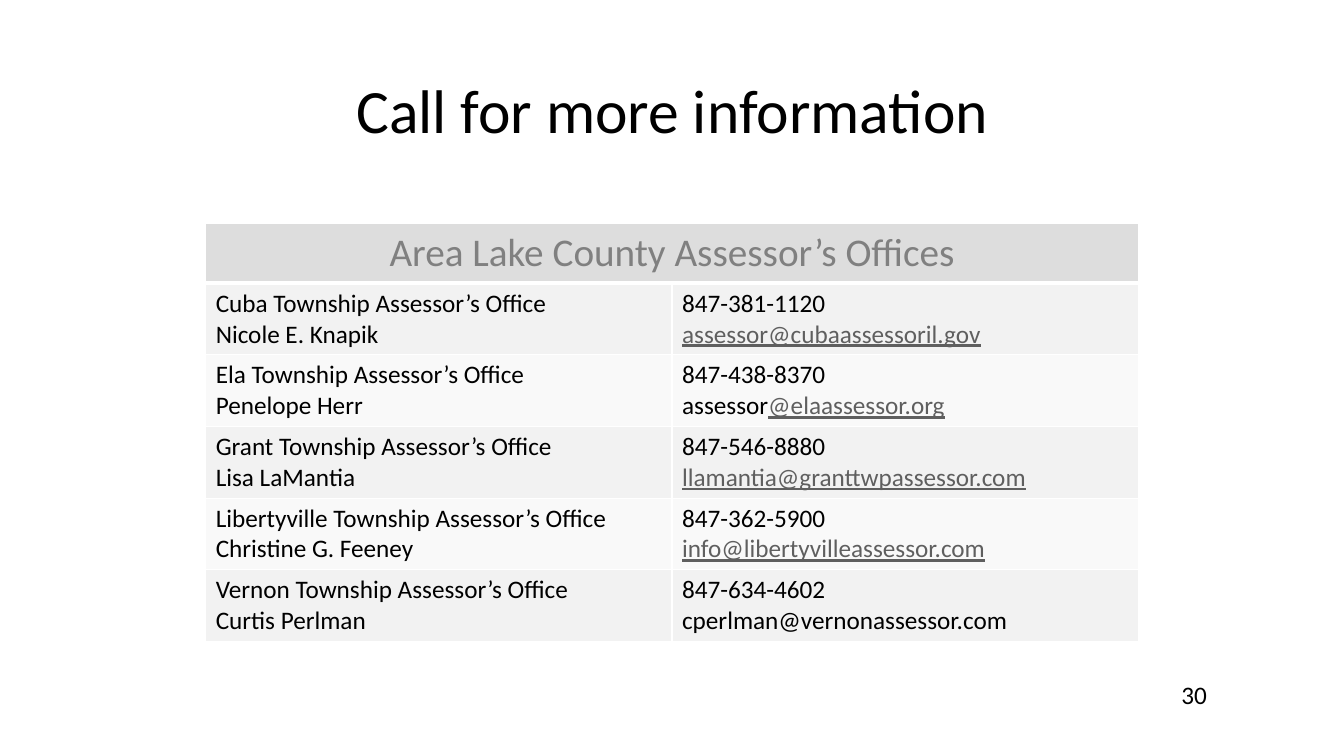
"""Build a slide with a contact table of township assessor's offices."""
from dataclasses import dataclass

from lxml.etree import SubElement
from pptx import Presentation
from pptx.dml.color import RGBColor
from pptx.enum.text import MSO_ANCHOR, PP_ALIGN
from pptx.oxml.ns import qn
from pptx.util import Inches, Pt


@dataclass(frozen=True)
class Theme:
    font: str = "Calibri"
    ink: str = "000000"
    head: str = "808080"
    link: str = "5F5F5F"
    edge: str = "FFFFFF"
    top: str = "DDDDDD"
    bands: tuple = ("F2F2F2", "F9F9F9")
    large: int = 44
    medium: int = 28
    small: int = 18


theme = Theme()


def style(run, size, color):
    run.font.name = theme.font
    run.font.size = Pt(size)
    run.font.color.rgb = RGBColor.from_string(color)


def finish(cell, fill, above, below):
    props = cell._tc.get_or_add_tcPr()
    for side, width in (("L", 1), ("R", 1), ("T", above), ("B", below)):
        line = SubElement(props, qn(f"a:ln{side}"), w=str(Pt(width)))
        solid = SubElement(line, qn("a:solidFill"))
        SubElement(solid, qn("a:srgbClr"), val=theme.edge)
    cell.fill.solid()
    cell.fill.fore_color.rgb = RGBColor.from_string(fill)


deck = Presentation()
deck.slide_width = Inches(13.33)
deck.slide_height = Inches(7.5)
slide = deck.slides.add_slide(deck.slide_layouts[5])

title = slide.shapes.title
title.left, title.top = Inches(0.92), Inches(0.4)
title.width, title.height = Inches(11.5), Inches(1.45)
frame = title.text_frame
frame.text = "Call for more information"
frame.vertical_anchor = MSO_ANCHOR.MIDDLE
para = frame.paragraphs[0]
para.alignment = PP_ALIGN.CENTER
para.line_spacing = 0.9
style(para.runs[0], theme.large, theme.ink)

offices = [
    ("Cuba", "Nicole E. Knapik", "847-381-1120", "", "assessor@cubaassessoril.gov"),
    ("Ela", "Penelope Herr", "847-438-8370", "assessor", "@elaassessor.org"),
    ("Grant", "Lisa LaMantia", "847-546-8880", "", "llamantia@granttwpassessor.com"),
    ("Libertyville", "Christine G. Feeney", "847-362-5900", "", "info@libertyvilleassessor.com"),
    ("Vernon", "Curtis Perlman", "847-634-4602", "cperlman@vernonassessor.com", ""),
]

table = slide.shapes.add_table(
    len(offices) + 1, 2, Inches(2.04), Inches(2.22), Inches(9.25), Inches(4.09)
).table
for row in table.rows:
    row.height = Inches(0.7)
table.rows[0].height = Inches(0.59)

head = table.cell(0, 0)
head.merge(table.cell(0, 1))
head.text_frame.text = "Area Lake County Assessor’s Offices"
para = head.text_frame.paragraphs[0]
para.alignment = PP_ALIGN.CENTER
style(para.runs[0], theme.medium, theme.head)
for cell in table.rows[0].cells:
    finish(cell, theme.top, 1, 3)

for index, (town, person, phone, plain, link) in enumerate(offices, 1):
    left, right = table.rows[index].cells
    left.text_frame.text = f"{town} Township Assessor’s Office\n{person}"
    right.text_frame.text = f"{phone}\n{plain}"
    for cell in (left, right):
        for para in cell.text_frame.paragraphs:
            for run in para.runs:
                style(run, theme.small, theme.ink)
        finish(cell, theme.bands[(index - 1) % 2], 3 if index == 1 else 1, 1)
    if link:
        run = right.text_frame.paragraphs[1].add_run()
        run.text = link
        style(run, theme.small, theme.link)
        run.font.underline = True

number = slide.shapes.add_textbox(Inches(11.62), Inches(6.69), Inches(0.53), Inches(0.4))
number.text_frame.word_wrap = True
number.text_frame.text = "30"
style(number.text_frame.paragraphs[0].runs[0], theme.small, theme.ink)

deck.save("out.pptx")
